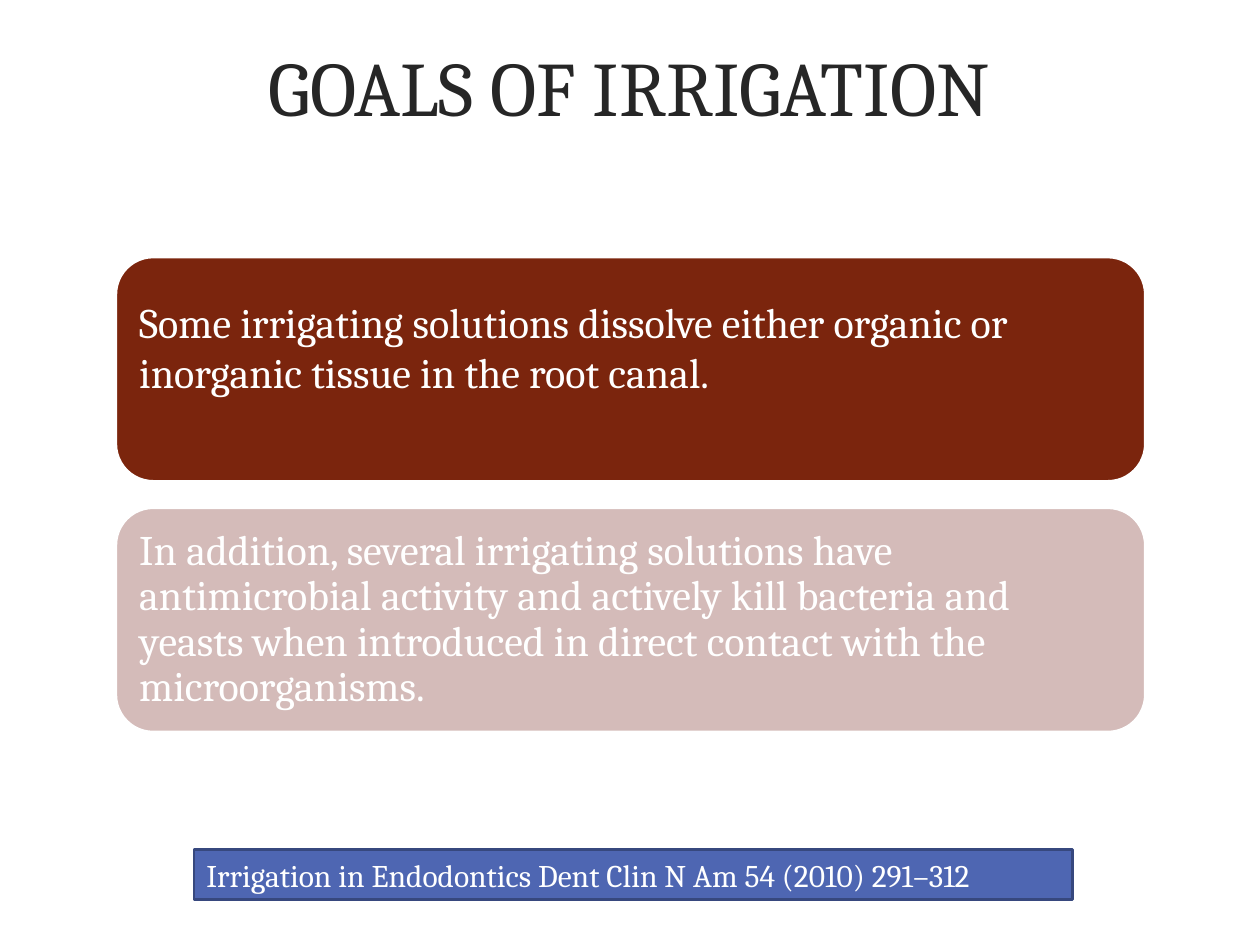
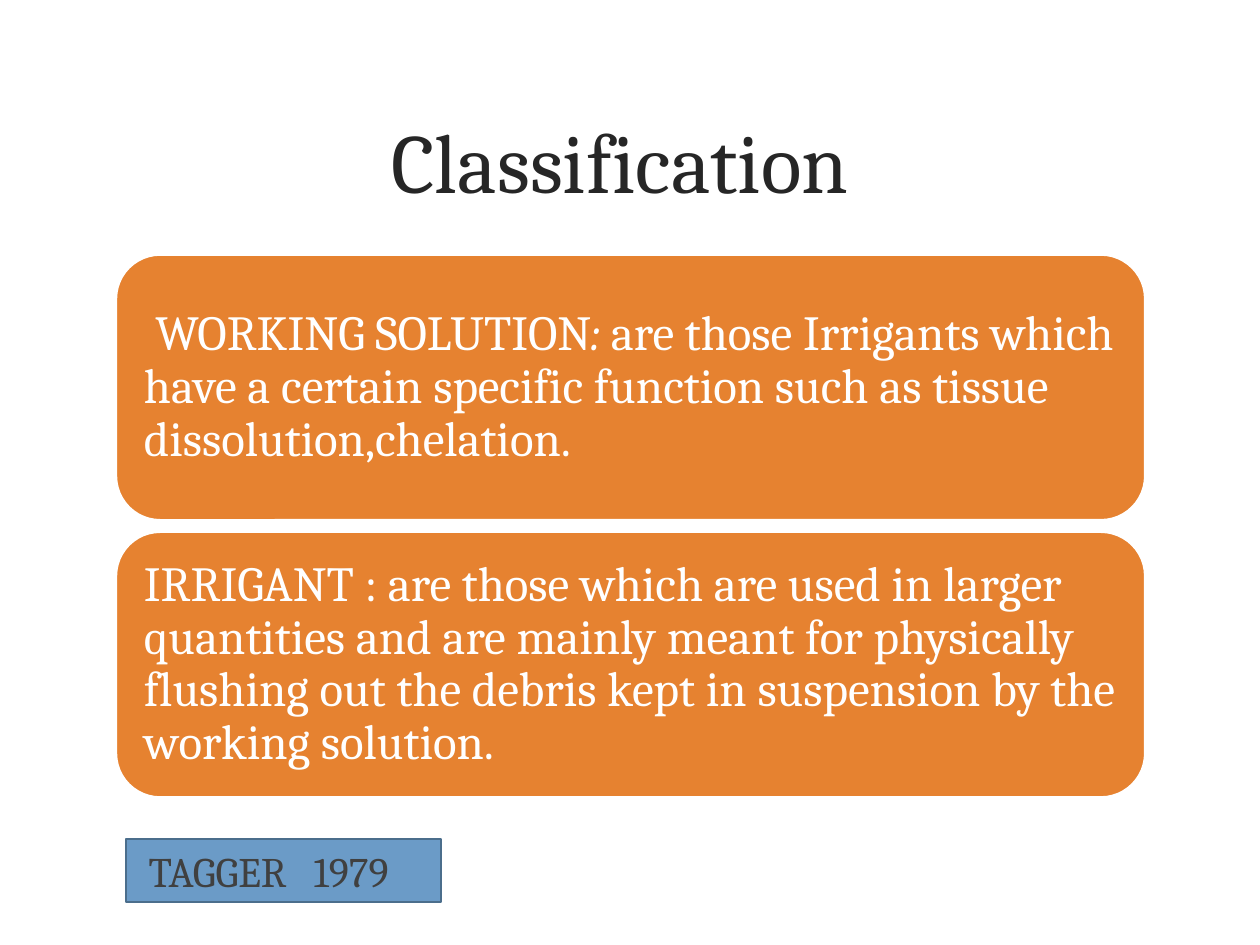
from dataclasses import dataclass

from lxml import etree
from pptx import Presentation
from pptx.dml.color import RGBColor
from pptx.enum.shapes import MSO_SHAPE
from pptx.enum.text import MSO_ANCHOR, PP_ALIGN
from pptx.oxml.ns import qn
from pptx.util import Inches, Pt

ROUNDED, RECT = MSO_SHAPE.ROUNDED_RECTANGLE, MSO_SHAPE.RECTANGLE
MIDDLE, LEFT, CENTER = MSO_ANCHOR.MIDDLE, PP_ALIGN.LEFT, PP_ALIGN.CENTER

SLIDE_W, SLIDE_H = Inches(10), Inches(7.5)
FONT = "Cambria"
COLORS = {
    "white": "FFFFFF",
    "title": "262626",
    "maroon": "7B250D",
    "rose": "D4BBB9",
    "orange": "E68230",
    "indigo": "4E66B2",
    "indigo_edge": "37487E",
    "sky": "6B9BC7",
    "sky_edge": "4B6E8C",
    "source": "404040",
}


@dataclass
class Box:
    """Place in percent of the slide's width and height."""
    left: float
    top: float
    width: float
    height: float

    def lengths(self) -> tuple[int, int, int, int]:
        return (int(SLIDE_W * self.left / 100), int(SLIDE_H * self.top / 100),
                int(SLIDE_W * self.width / 100), int(SLIDE_H * self.height / 100))


@dataclass
class Title:
    text: str
    size: int
    top: float
    right_inset: float = 0.1


@dataclass
class Card:
    """Runs are joined in one paragraph; a run ending in ': ' alone is italic."""
    runs: list[str]
    fill: str
    spacing: float = 0.9
    bottom_extra: float = 0
    indent: float = 0


@dataclass
class CardStack:
    top: float
    height: float
    gap: float
    size: int
    inset: float
    cards: list[Card]


@dataclass
class SourceTag:
    text: str
    box: Box
    fill: str
    edge: str
    color: str
    size: int
    left_inset: float = 0.1
    tab: float = 0


@dataclass
class Page:
    title: Title
    stack: CardStack
    source: SourceTag


PAGES = [
    Page(
        Title("GOALS OF IRRIGATION", 44, 0),
        CardStack(27.2, 23.73, 2.8, 24, 0.1, [
            Card(["Some irrigating solutions dissolve either organic or inorganic "
                  "tissue in the root canal."], "maroon", 1, 0.36),
            Card(["In addition, several irrigating solutions have antimicrobial activity "
                  "and actively kill bacteria and yeasts when introduced in direct contact "
                  "with the microorganisms."], "rose"),
        ]),
        SourceTag("Irrigation in Endodontics Dent Clin N Am 54 (2010) 291–312",
                  Box(15.4, 89.87, 69.7, 5.33), "indigo", "indigo_edge", "white", 18),
    ),
    Page(
        Title("Classification", 48, 7.87, 0.25),
        CardStack(26.93, 28.13, 1.2, 28, 0.12, [
            Card(["WORKING SOLUTION", ": ", "are those Irrigants which have a certain "
                  "specific function such as tissue dissolution,chelation."],
                 "orange", indent=0.09),
            Card(["IRRIGANT : are those which are used in larger quantities and are mainly "
                  "meant for physically flushing out the debris kept in suspension by the "
                  "working solution."], "orange"),
        ]),
        SourceTag("TAGGER\t1979", Box(10, 88.8, 25, 6.67), "sky", "sky_edge", "source", 24,
                  left_inset=0.18, tab=1.31),
    ),
]


def rgb(name: str) -> RGBColor:
    return RGBColor.from_string(COLORS[name])


def set_frame(tf, left: float, right: float, top: float, bottom: float) -> None:
    tf.word_wrap = True
    tf.vertical_anchor = MIDDLE
    tf.margin_left, tf.margin_right = Inches(left), Inches(right)
    tf.margin_top, tf.margin_bottom = Inches(top), Inches(bottom)


def format_runs(p, size: int, color: str, align=LEFT) -> None:
    p.alignment = align
    for r in p.runs:
        r.font.name, r.font.size = FONT, Pt(size)
        r.font.color.rgb = rgb(color)


def add_panel(slide, kind, box: Box, fill: str, edge: str):
    sp = slide.shapes.add_shape(kind, *box.lengths())
    sp.shadow.inherit = False
    sp.fill.solid()
    sp.fill.fore_color.rgb = rgb(fill)
    sp.line.color.rgb = rgb(edge)
    sp.line.width = Pt(1.5)
    return sp


def add_title(slide, title: Title) -> None:
    tf = slide.shapes.add_textbox(*Box(6, title.top, 87.9, 18.13).lengths()).text_frame
    set_frame(tf, 0.1, title.right_inset, 0.05, 0.05)
    tf.text = title.text
    format_runs(tf.paragraphs[0], title.size, "title", CENTER)


def add_stack(slide, stack: CardStack) -> None:
    for i, card in enumerate(stack.cards):
        top = stack.top + i * (stack.height + stack.gap)
        sp = add_panel(slide, ROUNDED, Box(9.2, top, 81.7, stack.height), card.fill, "white")
        pad = stack.inset
        set_frame(sp.text_frame, pad, pad, pad, pad + card.bottom_extra)
        p = sp.text_frame.paragraphs[0]
        p.line_spacing = card.spacing
        if card.indent:
            p._p.get_or_add_pPr().set("indent", str(Inches(card.indent)))
        for text in card.runs:
            r = p.add_run()
            r.text = text
            r.font.italic = text == ": "
        format_runs(p, stack.size, "white")


def add_source(slide, tag: SourceTag) -> None:
    tf = add_panel(slide, RECT, tag.box, tag.fill, tag.edge).text_frame
    set_frame(tf, tag.left_inset, 0.1, 0.05, 0.05)
    p = tf.paragraphs[0]
    if tag.tab:
        tabs = etree.SubElement(p._p.get_or_add_pPr(), qn("a:tabLst"))
        etree.SubElement(tabs, qn("a:tab"), pos=str(Inches(tag.tab)), algn="l")
    p.text = tag.text
    format_runs(p, tag.size, tag.color)


def main() -> None:
    prs = Presentation()
    prs.slide_width, prs.slide_height = SLIDE_W, SLIDE_H
    for page in PAGES:
        slide = prs.slides.add_slide(prs.slide_layouts[6])
        add_title(slide, page.title)
        add_stack(slide, page.stack)
        add_source(slide, page.source)
    prs.save("out.pptx")


if __name__ == "__main__":
    main()
